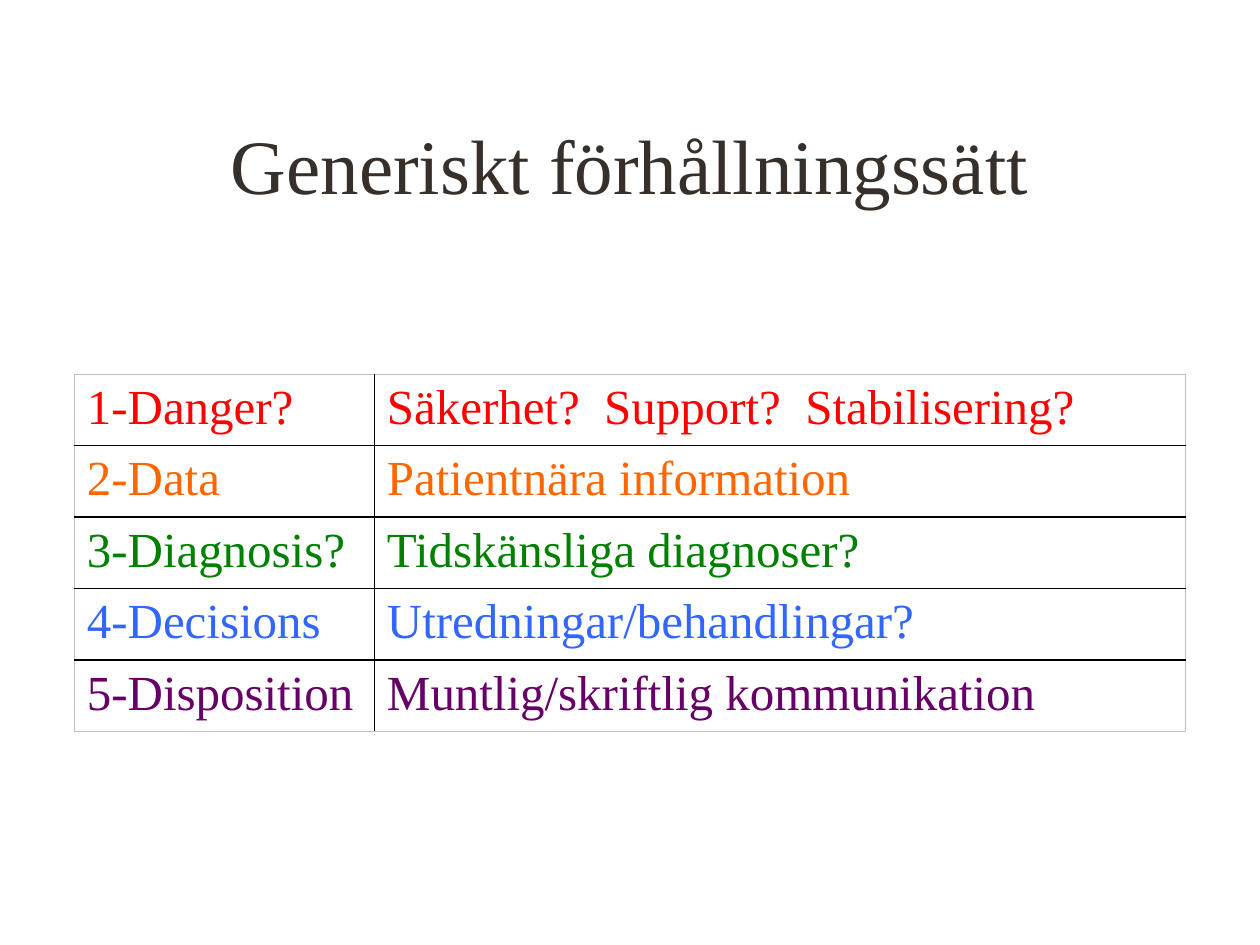
from lxml.etree import SubElement
from pptx import Presentation
from pptx.dml.color import RGBColor
from pptx.enum.text import MSO_ANCHOR, PP_ALIGN
from pptx.oxml.ns import qn
from pptx.util import Inches, Pt

FONT = "Times New Roman"
INNER_LINE = ("000000", 1)
OUTER_LINE = ("BFBFBF", 0.5)
STEPS = [
    ("1-Danger?", "Säkerhet?  Support?  Stabilisering?", "FF0000"),
    ("2-Data", "Patientnära information", "FF6600"),
    ("3-Diagnosis?", "Tidskänsliga diagnoser?", "008000"),
    ("4-Decisions", "Utredningar/behandlingar?", "3366FF"),
    ("5-Disposition", "Muntlig/skriftlig kommunikation", "660066"),
]


def rgb(hex_color):
    return RGBColor.from_string(hex_color)


def write(frame, text, size, color, align=PP_ALIGN.LEFT):
    paragraph = frame.paragraphs[0]
    paragraph.text = text
    paragraph.alignment = align
    font = paragraph.font
    font.name, font.size = FONT, Pt(size)
    font.color.rgb = rgb(color)


def add_heading(slide, box, text):
    frame = slide.shapes.add_textbox(*map(Inches, box)).text_frame
    frame.word_wrap = True
    frame.vertical_anchor = MSO_ANCHOR.MIDDLE
    write(frame, text, 44, "37302A", PP_ALIGN.CENTER)


def set_borders(cell, outer_edges):
    """Draw the four edges; outer_edges maps each tag to whether it is outermost."""
    properties = cell._tc.get_or_add_tcPr()
    for tag, is_outer in outer_edges.items():
        color, width = OUTER_LINE if is_outer else INNER_LINE
        line = SubElement(properties, qn(f"a:{tag}"), w=str(Pt(width)))
        fill = SubElement(line, qn("a:solidFill"))
        SubElement(fill, qn("a:srgbClr"), val=color)


def add_steps_table(slide, box, steps, first_column_share):
    left, top, width, height = map(Inches, box)
    last_row, last_column = len(steps) - 1, 1
    table = slide.shapes.add_table(len(steps), 2, left, top, width, height).table
    table.first_row = table.horz_banding = False
    table.columns[0].width = int(width * first_column_share)
    table.columns[1].width = width - table.columns[0].width
    for row, (step, meaning, color) in enumerate(steps):
        for column, text in enumerate((step, meaning)):
            cell = table.cell(row, column)
            set_borders(cell, {
                "lnL": column == 0,
                "lnR": column == last_column,
                "lnT": row == 0,
                "lnB": row == last_row,
            })
            cell.fill.background()
            write(cell.text_frame, text, 28, color)


def main():
    deck = Presentation()
    deck.slide_width, deck.slide_height = Inches(10), Inches(7.5)
    slide = deck.slides.add_slide(deck.slide_layouts[6])
    add_heading(slide, (0.75, 0.67, 8.5, 1.25), "Generiskt förhållningssätt")
    add_steps_table(slide, (0.59, 2.97, 8.82, 2.83), STEPS, 0.27)
    deck.save("out.pptx")


if __name__ == "__main__":
    main()
